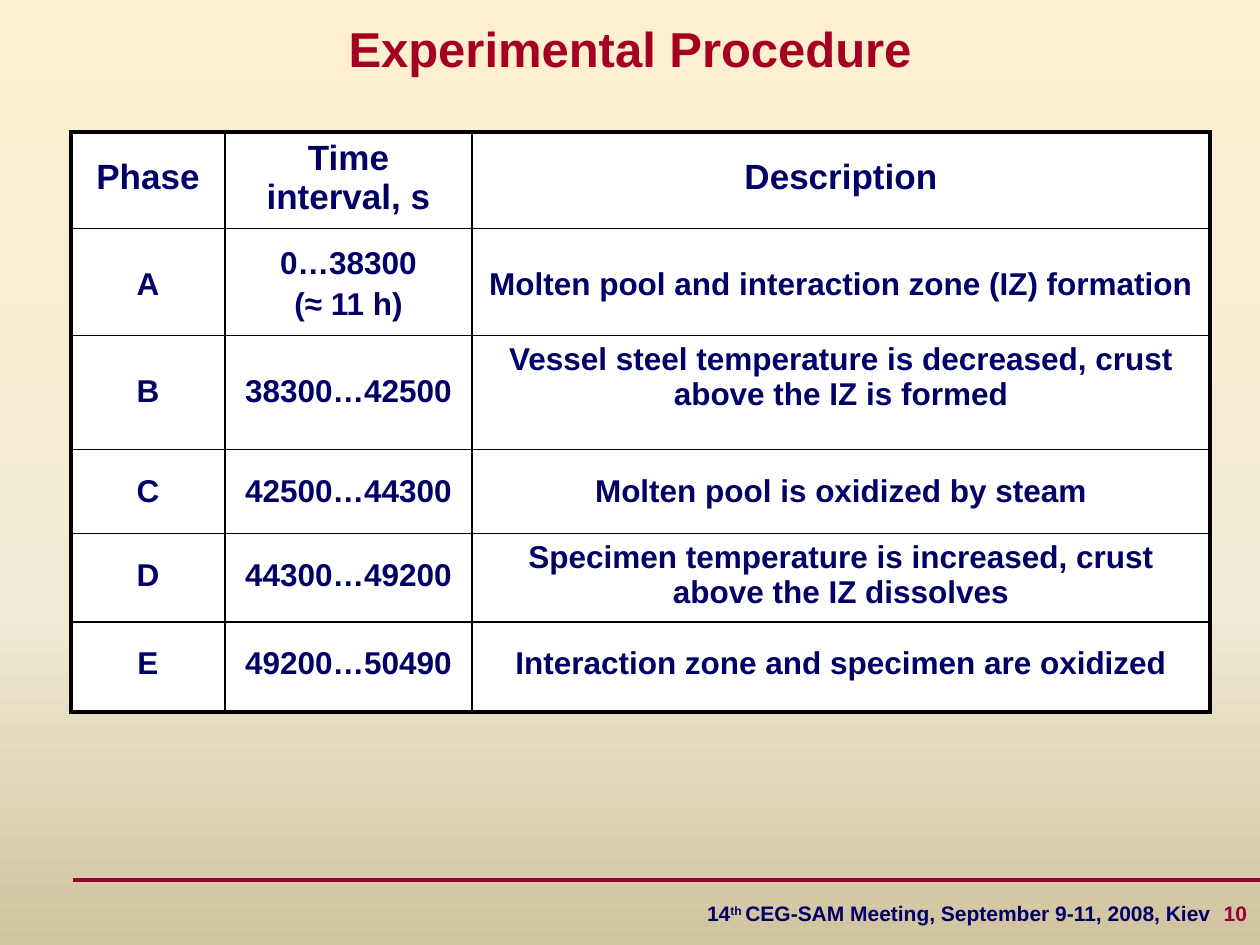
from copy import deepcopy

from lxml import etree
from pptx import Presentation
from pptx.dml.color import RGBColor
from pptx.enum.shapes import MSO_CONNECTOR
from pptx.enum.text import MSO_ANCHOR, PP_ALIGN
from pptx.oxml.ns import qn
from pptx.util import Pt

PX = 914400 / 126
FONT = "Arial"
NAVY = RGBColor(0x00, 0x00, 0x66)
RED = RGBColor(0xA5, 0x00, 0x21)
WINE = RGBColor(0x99, 0x00, 0x33)
BLACK = RGBColor(0x00, 0x00, 0x00)
WHITE = RGBColor(0xFF, 0xFF, 0xFF)
STOPS = [
    (0, RGBColor(0xFF, 0xEF, 0xD1)),
    (0.65, RGBColor(0xF0, 0xEB, 0xD5)),
    (1, RGBColor(0xD1, 0xC3, 0x9F)),
]
CENTER = PP_ALIGN.CENTER
RIGHT = PP_ALIGN.RIGHT
MIDDLE = MSO_ANCHOR.MIDDLE
STRAIGHT = MSO_CONNECTOR.STRAIGHT

COLS = [154, 247, 738]
ROWS = [90, 107, 114, 84, 87, 90]
CELLS = [
    [[("Phase", 1.5)], [("Time interval, s", 1)], [("Description", 1.5)]],
    [[("A", 1.9)], [("0…38300", 1.3), ("(≈ 11 h)", 1)],
     [("Molten pool and interaction zone (IZ) formation", 1.9)]],
    [[("B", 1.9)], [("38300…42500", 1.9)],
     [("Vessel steel temperature is decreased, crust above the IZ is formed", 1)]],
    [[("C", 1.5)], [("42500…44300", 1.5)],
     [("Molten pool is oxidized by steam", 1.5)]],
    [[("D", 1.5)], [("44300…49200", 1.5)],
     [("Specimen temperature is increased, crust above the IZ dissolves", 1)]],
    [[("E", 1.5)], [("49200…50490", 1.5)],
     [("Interaction zone and specimen are oxidized", 1.5)]],
]


def emu(*vals):
    return [round(v * PX) for v in vals]


def add_run(para, text, size, color):
    run = para.add_run()
    run.text = text
    font = run.font
    font.name, font.size, font.bold = FONT, Pt(size), True
    font.color.rgb = color
    return run


def paint(slide):
    fill = slide.background.fill
    fill.gradient()
    stops = next(slide._element.iter(qn("a:gsLst")))
    stops.append(deepcopy(stops[-1]))
    for stop, (pos, color) in zip(fill.gradient_stops, STOPS):
        stop.position = pos
        stop.color.rgb = color
    fill.gradient_angle = 270


def add_title(slide, box):
    title = slide.shapes.title
    title.left, title.top, title.width, title.height = emu(*box)
    frame = title.text_frame
    frame.vertical_anchor = MIDDLE
    para = frame.paragraphs[0]
    para.alignment = CENTER
    add_run(para, "Experimental Procedure", 28, RED)


def set_edge(cell, side, width):
    props = cell._tc.get_or_add_tcPr()
    line = etree.SubElement(props, qn("a:ln" + side), w=str(Pt(width)))
    fill = etree.SubElement(line, qn("a:solidFill"))
    etree.SubElement(fill, qn("a:srgbClr"), val=str(BLACK))


def fill_cell(cell, paras, size):
    frame = cell.text_frame
    for i, (text, gap) in enumerate(paras):
        para = frame.add_paragraph() if i else frame.paragraphs[0]
        para.alignment = CENTER
        para.line_spacing = float(gap)
        if i:
            para.space_before = Pt(3.6)
        add_run(para, text, size, NAVY)


def add_grid(slide, left, top):
    box = emu(left, top, sum(COLS), sum(ROWS))
    table = slide.shapes.add_table(len(ROWS), len(COLS), *box).table
    table.first_row = table.horz_banding = False
    for col, width in zip(table.columns, emu(*COLS)):
        col.width = width
    for row, height in zip(table.rows, emu(*ROWS)):
        row.height = height
    for r, row in enumerate(CELLS):
        for c, paras in enumerate(row):
            cell = table.cell(r, c)
            outer = {"L": c == 0, "R": c == len(COLS) - 1,
                     "T": r == 0, "B": r == len(ROWS) - 1}
            for side, thick in outer.items():
                set_edge(cell, side, 2.25 if thick else 1)
            cell.fill.solid()
            cell.fill.fore_color.rgb = WHITE
            fill_cell(cell, paras, 18 if r else 20)


def add_note(slide, box):
    frame = slide.shapes.add_textbox(*emu(*box)).text_frame
    frame.word_wrap = False
    frame.vertical_anchor = MIDDLE
    frame.margin_left = frame.margin_right = 0
    para = frame.paragraphs[0]
    para.alignment = RIGHT
    return para


def add_foot(slide, left, top, width, height):
    right = left + width
    rule = slide.shapes.add_connector(STRAIGHT, *emu(left, top, right, top))
    rule.line.color.rgb = WINE
    rule.line.width = Pt(2.25)
    etree.SubElement(rule._element.spPr, qn("a:effectLst"))
    para = add_note(slide, (right - 560, top + 2, 511, height))
    add_run(para, "14", 12, NAVY)
    raised = add_run(para, "th ", 12, NAVY)
    raised.font._element.set("baseline", "30000")
    add_run(para, "CEG-SAM Meeting, September 9-11, 2008, Kiev", 12, NAVY)
    para = add_note(slide, (right - 43, top + 2, 30, height))
    add_run(para, "10", 12, WINE)


def main():
    deck = Presentation()
    deck.slide_width, deck.slide_height = emu(1260, 945)
    slide = deck.slides.add_slide(deck.slide_layouts[5])
    paint(slide)
    add_foot(slide, 73, 880, 1187, 63)
    add_title(slide, (0, 0, 1260, 96))
    add_grid(slide, 71, 132)
    deck.save("out.pptx")


if __name__ == "__main__":
    main()
